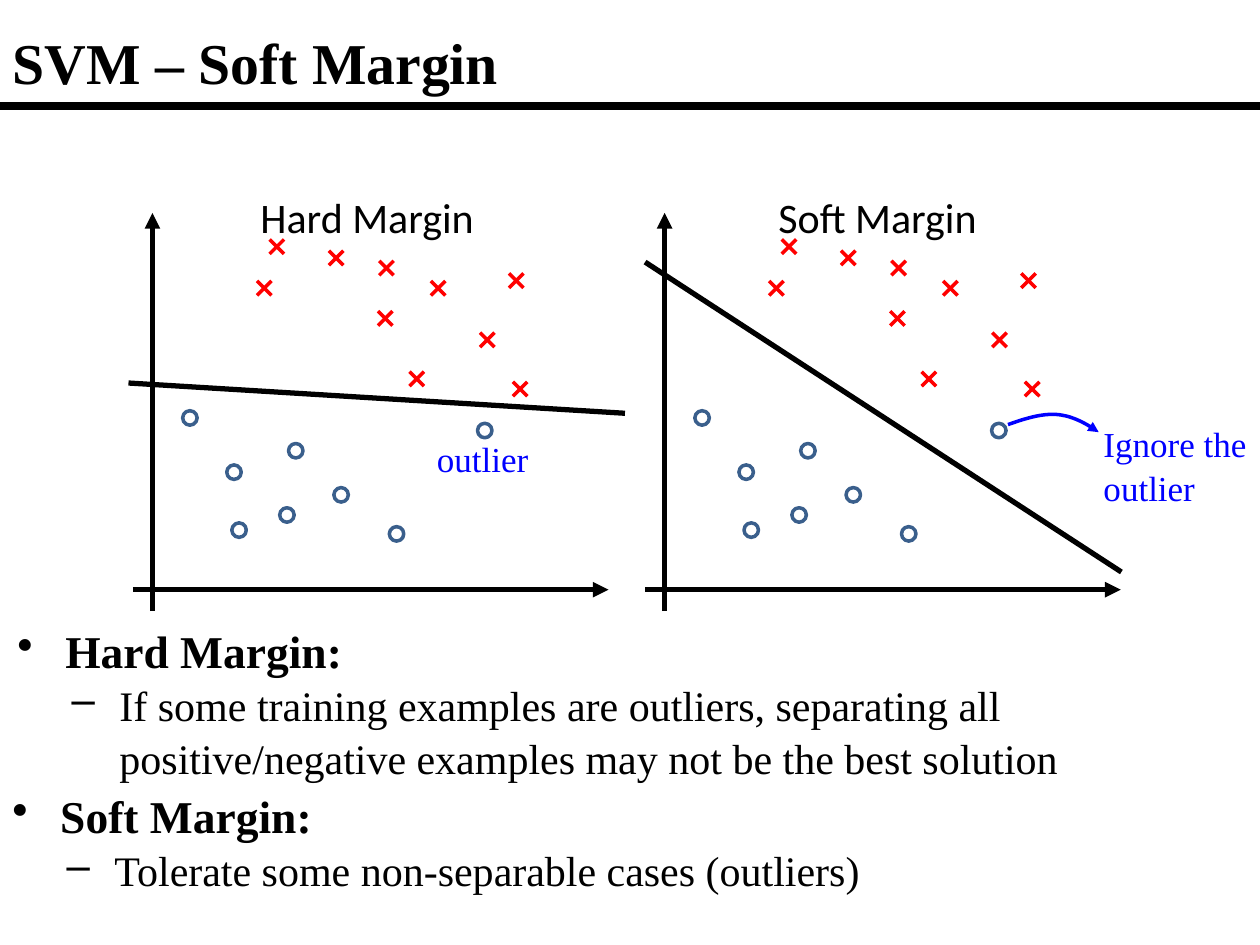
from lxml import etree
from pptx import Presentation
from pptx import util as u
from pptx.dml.color import RGBColor
from pptx.enum import shapes, text
from pptx.oxml.ns import qn

BLACK = RGBColor(0x00, 0x00, 0x00)
BLUE = RGBColor(0x00, 0x00, 0xFF)
RED = RGBColor(0xFF, 0x00, 0x00)
STEEL = RGBColor(0x3A, 0x5F, 0x8C)
SERIF, SANS = "Times New Roman", "Calibri"
COLUMNS, ROWS = 100, 75
MARK = 1.15  # size of a data mark, in grid cells

# Data marks of the left plot: left and top, in columns and rows
CIRCLES = [(14.5, 32.6), (18, 36.9), (22.9, 35.2), (26.5, 38.7),
           (22.2, 40.3), (18.4, 41.5), (30.9, 41.8)]
CROSSES = [(20.4, 22.3), (32.5, 29.5), (34.2, 22.3), (26.1, 19.9), (21.4, 19),
           (30.1, 20.7), (38.1, 26.4), (30, 24.7), (40.4, 21.7), (40.7, 30.3)]
PLOT_SHIFT = 40.65


class Canvas:
    """Holds the style and the slide; lengths are grid columns and rows."""

    def __init__(self, presentation):
        self.slide = presentation.slides.add_slide(presentation.slide_layouts[6])
        self.column = presentation.slide_width / COLUMNS
        self.row = presentation.slide_height / ROWS
        self.target = self.slide.shapes

    def place(self, x, y):
        return u.Emu(round(x * self.column)), u.Emu(round(y * self.row))

    def stroke(self, shape, color, width, arrow=False):
        shape.line.color.rgb = color
        shape.line.width = u.Pt(width)
        if arrow:
            outline = shape._element.spPr.find(qn("a:ln"))
            etree.SubElement(outline, qn("a:tailEnd"), type="triangle")

    def line(self, start, end, color=BLACK, width=3, arrow=False):
        connector = self.target.add_connector(
            shapes.MSO_CONNECTOR.STRAIGHT, *self.place(*start), *self.place(*end))
        self.stroke(connector, color, width, arrow)
        etree.SubElement(connector._element.spPr, qn("a:effectLst"))

    def circle(self, x, y):
        shape = self.target.add_shape(
            shapes.MSO_SHAPE.OVAL, *self.place(x, y), *self.place(MARK, MARK))
        shape.shadow.inherit = False
        shape.fill.background()
        self.stroke(shape, STEEL, 2)

    def cross(self, x, y):
        self.line((x, y), (x + MARK, y + MARK), RED, 2)
        self.line((x + MARK, y), (x, y + MARK), RED, 2)

    def curve(self, start, *segments, steps=16):
        """Draw joined cubic curves as one open outline with an arrowhead."""
        points = [start]
        for controls in segments:
            a, b, c, d = points[-1], *controls
            for step in range(1, steps + 1):
                t = step / steps
                s = 1 - t
                points.append(tuple(
                    s**3 * a[i] + 3 * s * s * t * b[i] + 3 * s * t * t * c[i] + t**3 * d[i]
                    for i in (0, 1)))
        places = [self.place(*point) for point in points]
        builder = self.target.build_freeform(*places[0])
        builder.add_line_segments(places[1:], close=False)
        shape = builder.convert_to_shape()
        shape.shadow.inherit = False
        shape.fill.background()
        self.stroke(shape, BLUE, 2, arrow=True)

    def frame(self, x, y, width, height, anchor=text.MSO_ANCHOR.TOP):
        box = self.target.add_textbox(*self.place(x, y), *self.place(width, height))
        box.text_frame.word_wrap = True
        box.text_frame.vertical_anchor = anchor
        return box.text_frame

    def add_words(self, paragraph, words, color=BLACK, **font):
        run = paragraph.add_run()
        run.text = words
        run.font.color.rgb = color
        for name, value in font.items():
            setattr(run.font, name, value)

    def label(self, area, words, size, font=SERIF, color=BLACK, bold=False,
              align=text.PP_ALIGN.LEFT, anchor=text.MSO_ANCHOR.TOP):
        paragraph = self.frame(*area, anchor=anchor).paragraphs[0]
        paragraph.alignment = align
        if font == SERIF:
            paragraph.line_spacing = 1.04
        self.add_words(paragraph, words, color, size=u.Pt(size), name=font, bold=bold)

    def bullets(self, area, heading, detail):
        frame = self.frame(*area)
        levels = [(heading, "•", 0.38, 26, True), (detail, "–", 0.81, 24, False)]
        for level, (words, bullet, indent, size, bold) in enumerate(levels):
            paragraph = frame.add_paragraph() if level else frame.paragraphs[0]
            paragraph.level = level
            paragraph.line_spacing = 1.04
            properties = paragraph._p.get_or_add_pPr()
            properties.set("marL", str(u.Inches(indent)))
            properties.set("indent", str(-u.Inches(0.38)))
            etree.SubElement(properties, qn("a:buChar"), char=bullet)
            self.add_words(paragraph, words, size=u.Pt(size), name=SERIF, bold=bold)

    def plot(self, shift, boundary):
        """Group the axes, the data marks and the separating line."""
        self.target = self.slide.shapes.add_group_shape().shapes
        self.line(*boundary)
        self.line((12.1 + shift, 48.5), (12.1 + shift, 16.9), arrow=True)
        self.line((10.55 + shift, 46.8), (48.3 + shift, 46.8), arrow=True)
        for x, y in CIRCLES:
            self.circle(x + shift, y)
        for x, y in CROSSES:
            self.cross(x + shift, y)
        self.target = self.slide.shapes


def main():
    presentation = Presentation()
    presentation.slide_width, presentation.slide_height = u.Inches(10), u.Inches(7.5)
    canvas = Canvas(presentation)
    center = text.PP_ALIGN.CENTER

    # Title and rule
    canvas.label((0, 0.8, 100, 7.9), "SVM – Soft Margin", 33, bold=True,
                 anchor=text.MSO_ANCHOR.MIDDLE)
    canvas.line((0, 8.4), (100, 8.4), width=4.5)

    # Plots with their outliers and headings
    canvas.plot(0, ((10.2, 30.4), (49.6, 32.8)))
    canvas.plot(PLOT_SHIFT, ((51.2, 20.8), (89, 45.4)))
    for x in (37.9, 78.7):
        canvas.circle(x, 33.6)
    for x, words in ((19.3, "Hard Margin"), (59.8, "Soft Margin")):
        canvas.label((x, 14.7, 19.7, 5), words, 24, SANS, align=center)

    # Outlier notes
    canvas.label((31.9, 34.1, 12.8, 4.4), "outlier", 20, color=BLUE, align=center)
    canvas.label((86.6, 32.9, 15.4, 7.7), "Ignore the outlier", 20, color=BLUE)
    canvas.curve((80, 33.7), ((81.4, 33.2), (82.7, 32.8), (83.9, 32.9)),
                 ((85.1, 33), (86.2, 33.6), (87.2, 34.3)))

    # Explanations
    canvas.bullets((0.4, 48.8, 100, 13.5), "Hard Margin:",
                   "If some training examples are outliers, separating all "
                   "positive/negative examples may not be the best solution")
    canvas.bullets((0, 61.9, 100, 9.4), "Soft Margin:",
                   "Tolerate some non-separable cases (outliers)")
    presentation.save("out.pptx")


if __name__ == "__main__":
    main()
